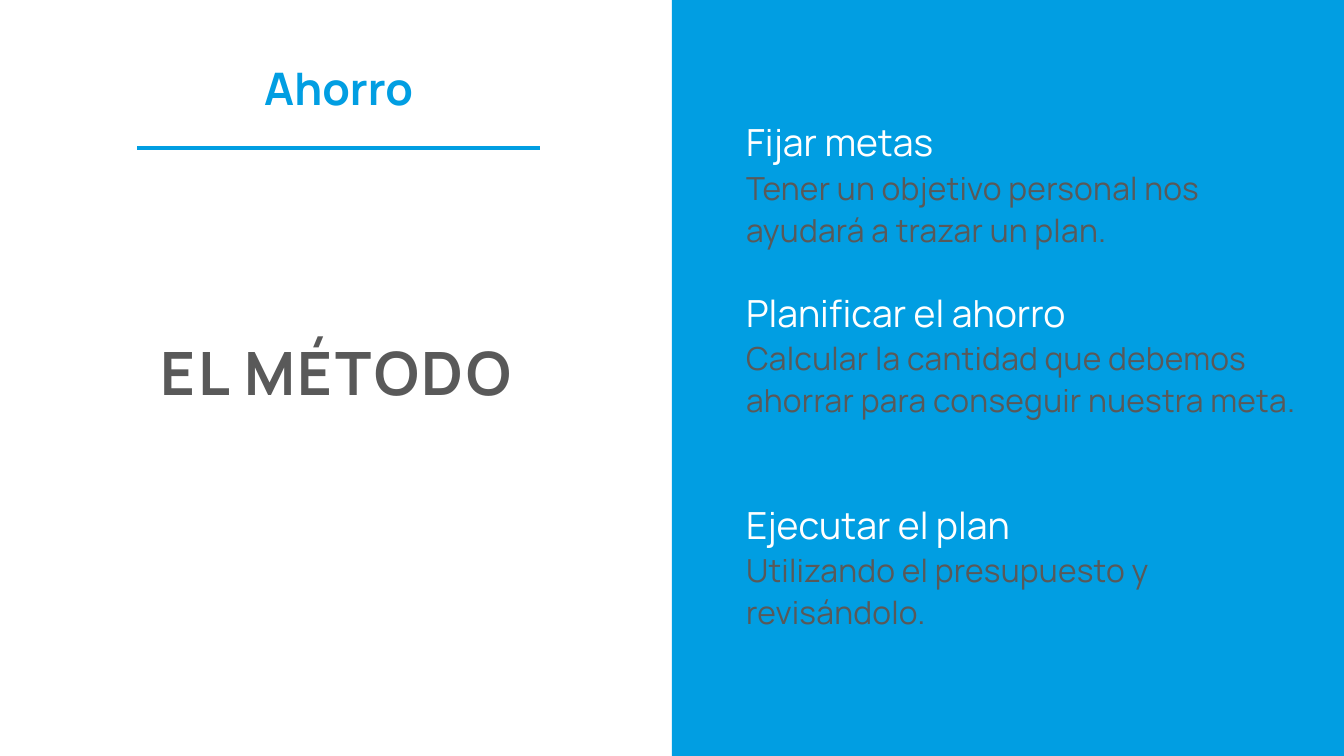
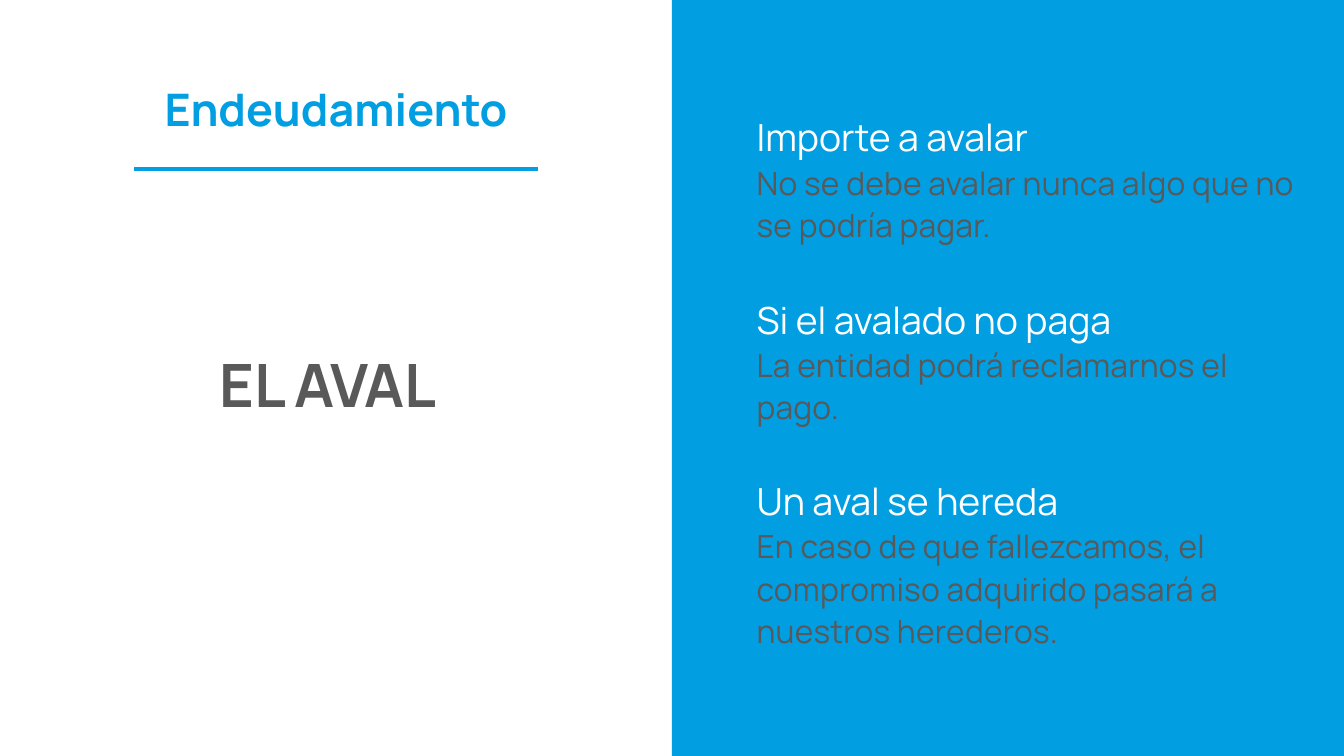
from dataclasses import dataclass

from lxml import etree
from pptx import Presentation
from pptx import util as u
from pptx.dml.color import RGBColor
from pptx.enum import shapes, text
from pptx.oxml import ns

Cm, Pt = u.Cm, u.Pt
WIDE, HIGH = 25.4, 14.29
HALF = WIDE / 2
RULE = 7.62


@dataclass(frozen=True)
class Theme:
    font: str = "Manrope"
    blue: RGBColor = RGBColor(0x01, 0x9E, 0xE2)
    grey: RGBColor = RGBColor(0x59, 0x59, 0x59)
    white: RGBColor = RGBColor(0xFF, 0xFF, 0xFF)
    title: int = 24
    topic: int = 32
    head: int = 20
    body: int = 17


class Deck:
    def __init__(self, theme):
        self.theme = theme
        self.file = Presentation()
        self.file.slide_width, self.file.slide_height = Cm(WIDE), Cm(HIGH)
        self.slide = None

    def page(self):
        self.slide = self.file.slides.add_slide(self.file.slide_layouts[5])
        fill = self.slide.background.fill
        fill.solid()
        fill.fore_color.rgb = self.theme.white

    def label(self, shape, words, size, color, bold=False, lead=None,
              track=0, align=text.PP_ALIGN.LEFT):
        """Fill a text shape; track is letter spacing in points."""
        frame = shape.text_frame
        frame.text = words
        para = frame.paragraphs[0]
        run = para.runs[0]
        font = run.font
        looks = [
            (frame, dict(margin_left=0, margin_top=0, margin_right=0,
                         margin_bottom=0, word_wrap=True,
                         vertical_anchor=text.MSO_ANCHOR.TOP,
                         auto_size=text.MSO_AUTO_SIZE.SHAPE_TO_FIT_TEXT)),
            (para, dict(alignment=align,
                        line_spacing=Pt(lead) if lead else 1.0)),
            (font, dict(name=self.theme.font, size=Pt(size), bold=bold)),
        ]
        for part, values in looks:
            for key, value in values.items():
                setattr(part, key, value)
        font.color.rgb = color
        if track:
            run._r.get_or_add_rPr().set("spc", str(round(track * 100)))

    def panel(self):
        box = self.slide.shapes.add_shape(
            shapes.MSO_SHAPE.RECTANGLE, Cm(HALF), 0, Cm(HALF), Cm(HIGH))
        box.shadow.inherit = False
        box.fill.solid()
        box.fill.fore_color.rgb = self.theme.blue
        box.line.fill.background()

    def title(self, words, left, top, width):
        shape = self.slide.shapes.title
        place = dict(left=left, top=top, width=width, height=1.02)
        for key, value in place.items():
            setattr(shape, key, Cm(value))
        self.label(shape, words, self.theme.title, self.theme.blue, bold=True,
                   align=text.PP_ALIGN.CENTER)
        self.rule(left + (width - RULE) / 2, top + 1.65)

    def rule(self, left, top):
        line = self.slide.shapes.add_connector(
            shapes.MSO_CONNECTOR.STRAIGHT,
            Cm(left), Cm(top), Cm(left + RULE), Cm(top))
        line.line.color.rgb = self.theme.blue
        line.line.width = Pt(2.25)
        etree.SubElement(line._element.spPr, ns.qn("a:effectLst"))

    def topic(self, words, left, top, width, track=0):
        box = self.slide.shapes.add_textbox(
            Cm(left), Cm(top), Cm(width), Cm(1.37))
        self.label(box, words, self.theme.topic, self.theme.grey, bold=True,
                   track=track, align=text.PP_ALIGN.CENTER)

    def point(self, left, top, head, body, width, lines=2):
        """Group a heading with the explanation below it."""
        group = self.slide.shapes.add_group_shape().shapes
        box = group.add_textbox(Cm(left), Cm(top), Cm(10.52), Cm(0.84))
        self.label(box, head, self.theme.head, self.theme.white, lead=24.6)
        box = group.add_textbox(
            Cm(left), Cm(top + 0.87), Cm(width), Cm(0.8 * lines))
        self.label(box, body, self.theme.body, self.theme.grey, lead=22.6,
                   track=0.1)


PAGES = [
    dict(title=("Ahorro", 0.15, 1.14, 12.5),
         topic=("EL MÉTODO", 0, 6.35, HALF, 1.4),
         left=14.1,
         points=[
             (2.24, "Fijar metas",
              "Tener un objetivo personal nos ayudará a trazar un plan.", 10.52),
             (5.46, "Planificar el ahorro",
              "Calcular la cantidad que debemos ahorrar para conseguir "
              "nuestra meta.", 10.52),
             (9.47, "Ejecutar el plan",
              "Utilizando el presupuesto y revisándolo.", 9.02),
         ]),
    dict(title=("Endeudamiento", 0, 1.55, HALF),
         topic=("EL AVAL", 1.7, 6.58, 9),
         left=14.3,
         points=[
             (2.14, "Importe a avalar",
              "No se debe avalar nunca algo que no se podría pagar.", 10.21),
             (5.59, "Si el avalado no paga",
              "La entidad podrá reclamarnos el pago.", 9.6),
             (9.02, "Un aval se hereda",
              "En caso de que fallezcamos, el compromiso adquirido pasará a "
              "nuestros herederos.", 9.8, 3),
         ]),
]


def main():
    deck = Deck(Theme())
    for page in PAGES:
        deck.page()
        deck.panel()
        deck.title(*page["title"])
        deck.topic(*page["topic"])
        for point in page["points"]:
            deck.point(page["left"], *point)
    deck.file.save("out.pptx")


if __name__ == "__main__":
    main()
